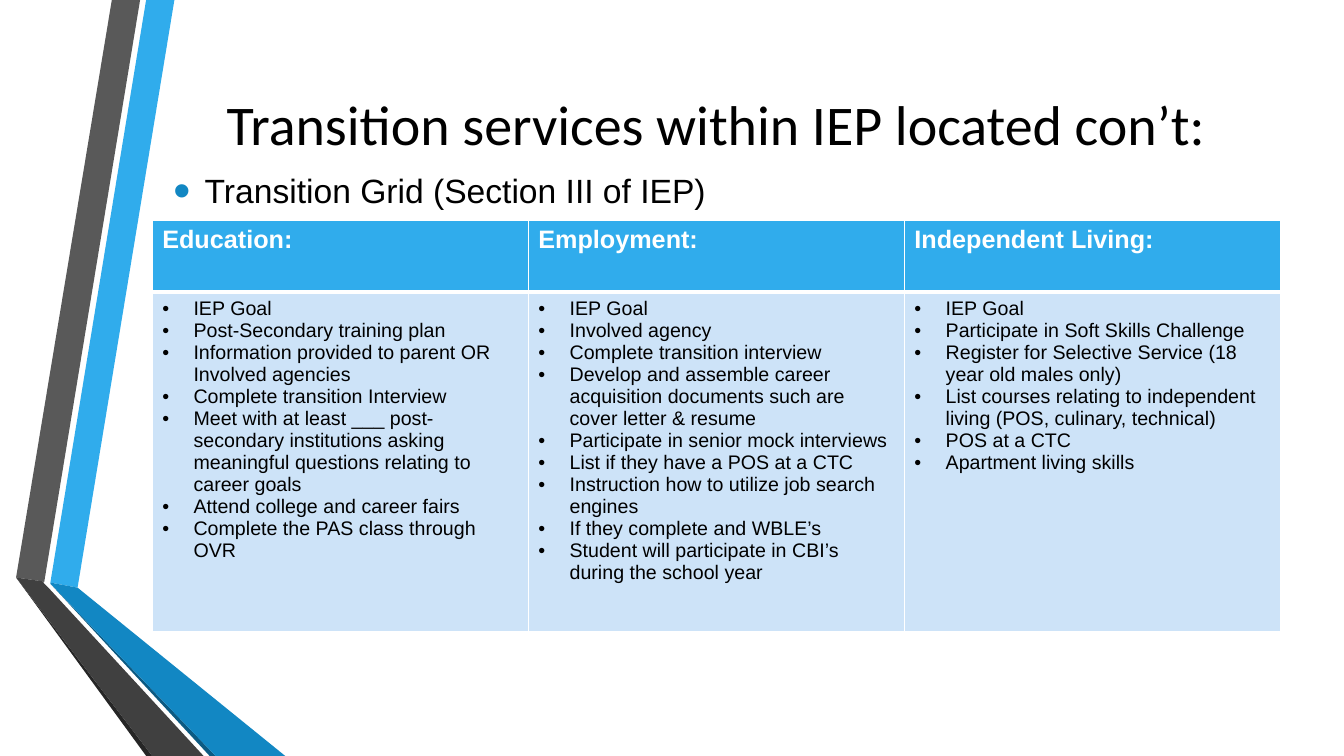
from lxml import etree
from pptx import Presentation
from pptx.dml.color import RGBColor
from pptx.enum.text import MSO_ANCHOR, MSO_AUTO_SIZE, PP_ALIGN
from pptx.oxml.ns import qn
from pptx.util import Inches, Pt

CENTER, LEFT = PP_ALIGN.CENTER, PP_ALIGN.LEFT
TOP, MIDDLE = MSO_ANCHOR.TOP, MSO_ANCHOR.MIDDLE
NO_FIT = MSO_AUTO_SIZE.NONE

BLACK, WHITE = "000000", "FFFFFF"
SKY, BLUE, PALE = "30ACEC", "1287C3", "CDE3F8"

RIBBONS = [
    (SKY, [(0.5, 5.78), (0.77, 5.83), (1.73, 0), (1.45, 0)]),
    ("595959", [(1.39, 0), (1.11, 0), (0.16, 5.73), (0.44, 5.77)]),
    ("262626", [(0.16, 5.73), (1.45, 7.5), (1.51, 7.5)]),
    ("0C5A82", [(0.5, 5.79), (2.08, 7.5), (2.14, 7.5)]),
    (BLUE, [(0.5, 5.79), (2.14, 7.5), (2.83, 7.5), (0.77, 5.83), (0.5, 5.78)]),
    ("404040", [(2.02, 7.5), (0.48, 5.83), (0.43, 5.78), (0.44, 5.77),
                (0.16, 5.73), (1.51, 7.5)]),
]

SERVICES = {
    "Education:": [
        "IEP Goal",
        "Post-Secondary training plan",
        "Information provided to parent OR Involved agencies",
        "Complete transition Interview",
        "Meet with at least ___ post-secondary institutions asking "
        "meaningful questions relating to career goals",
        "Attend college and career fairs",
        "Complete the PAS class through OVR",
    ],
    "Employment:": [
        "IEP Goal",
        "Involved agency",
        "Complete transition interview",
        "Develop and assemble career acquisition documents such are "
        "cover letter & resume",
        "Participate in senior mock interviews",
        "List if they have a POS at a CTC",
        "Instruction how to utilize job search engines",
        "If they complete and WBLE’s",
        "Student will participate in CBI’s during the school year",
    ],
    "Independent Living:": [
        "IEP Goal",
        "Participate in Soft Skills Challenge",
        "Register for Selective Service (18 year old males only)",
        "List courses relating to independent living (POS, culinary, technical)",
        "POS at a CTC",
        "Apartment living skills",
    ],
}


def color(value):
    return RGBColor.from_string(value)


def apply(target, values):
    for name, value in values.items():
        setattr(target, name, value)


def add_node(parent, tag, **attributes):
    node = etree.SubElement(parent, qn(tag))
    for name, value in attributes.items():
        node.set(name, str(value))
    return node


class SlideBuilder:
    indent = Inches(0.31)

    def __init__(self, deck):
        self.slide = deck.slides.add_slide(deck.slide_layouts[1])
        self.shapes = self.slide.shapes

    def ribbon(self, fill, points):
        corners = [(Inches(x), Inches(y)) for x, y in points]
        outline = self.shapes.build_freeform(*corners[0], scale=1.0)
        outline.add_line_segments(corners[1:], close=True)
        shape = outline.convert_to_shape()
        shape.shadow.inherit = False
        shape.fill.solid()
        shape.fill.fore_color.rgb = color(fill)
        shape.line.fill.background()

    def bullet(self, para, tint, percent):
        properties = para._p.get_or_add_pPr()
        properties.set("marL", str(self.indent))
        properties.set("indent", str(-self.indent))
        add_node(add_node(properties, "a:buClr"), "a:srgbClr", val=tint)
        add_node(properties, "a:buSzPct", val=percent * 1000)
        add_node(properties, "a:buFont", typeface="Arial")
        add_node(properties, "a:buChar", char="•")

    def fill_text(self, frame, lines, size, font="Arial", tint=BLACK, bold=False,
                  align=LEFT, bullet=None):
        for index, line in enumerate(lines):
            para = frame.add_paragraph() if index else frame.paragraphs[0]
            apply(para, {"alignment": align, "space_before": Pt(0)})
            if bullet:
                self.bullet(para, *bullet)
            span = para.add_run()
            apply(span, {"text": line})
            apply(span.font, {"name": font, "size": Pt(size), "bold": bold})
            span.font.color.rgb = color(tint)

    def placeholder(self, index, place, anchor, lines, size, **style):
        box = self.slide.placeholders[index]
        apply(box, dict(zip(("left", "top", "width", "height"), map(Inches, place))))
        apply(box.text_frame, {"word_wrap": True, "auto_size": NO_FIT,
                               "vertical_anchor": anchor, "margin_top": 0,
                               "margin_bottom": 0})
        self.fill_text(box.text_frame, lines, size, **style)

    def cell(self, cell, fill, edges, lines, size, **style):
        properties = cell._tc.get_or_add_tcPr()
        for side, width in zip("LRTB", edges):
            line = add_node(properties, f"a:ln{side}", w=Pt(width))
            add_node(add_node(line, "a:solidFill"), "a:srgbClr", val=WHITE)
        cell.fill.solid()
        cell.fill.fore_color.rgb = color(fill)
        self.fill_text(cell.text_frame, lines, size, **style)

    def grid(self, left, top, column_width, row_heights, columns):
        table = self.shapes.add_table(
            len(row_heights), len(columns), Inches(left), Inches(top),
            Inches(column_width * len(columns)), Inches(sum(row_heights))).table
        table.horz_banding = False
        for row, height in zip(table.rows, row_heights):
            row.height = Inches(height)
        for index, (heading, items) in enumerate(columns.items()):
            table.columns[index].width = Inches(column_width)
            self.cell(table.cell(0, index), SKY, (1, 1, 1, 3), [heading], 18,
                      tint=WHITE, bold=True)
            self.cell(table.cell(1, index), PALE, (1, 1, 3, 1), items, 14,
                      bullet=(BLACK, 100))


def main():
    deck = Presentation()
    apply(deck, {"slide_width": Inches(13.33), "slide_height": Inches(7.5)})
    page = SlideBuilder(deck)
    for fill, points in RIBBONS:
        page.ribbon(fill, points)
    page.placeholder(0, (1.62, 0.75, 10.96, 0.94), MIDDLE,
                     ["Transition services within IEP located con’t:"], 40,
                     font="Calibri", align=CENTER)
    page.placeholder(1, (1.62, 1.69, 10.96, 0.74), TOP,
                     ["Transition Grid (Section III of IEP)"], 24,
                     bullet=(BLUE, 145))
    page.grid(1.51, 2.19, 3.73, (0.71, 3.37), SERVICES)
    deck.save("out.pptx")


if __name__ == "__main__":
    main()
